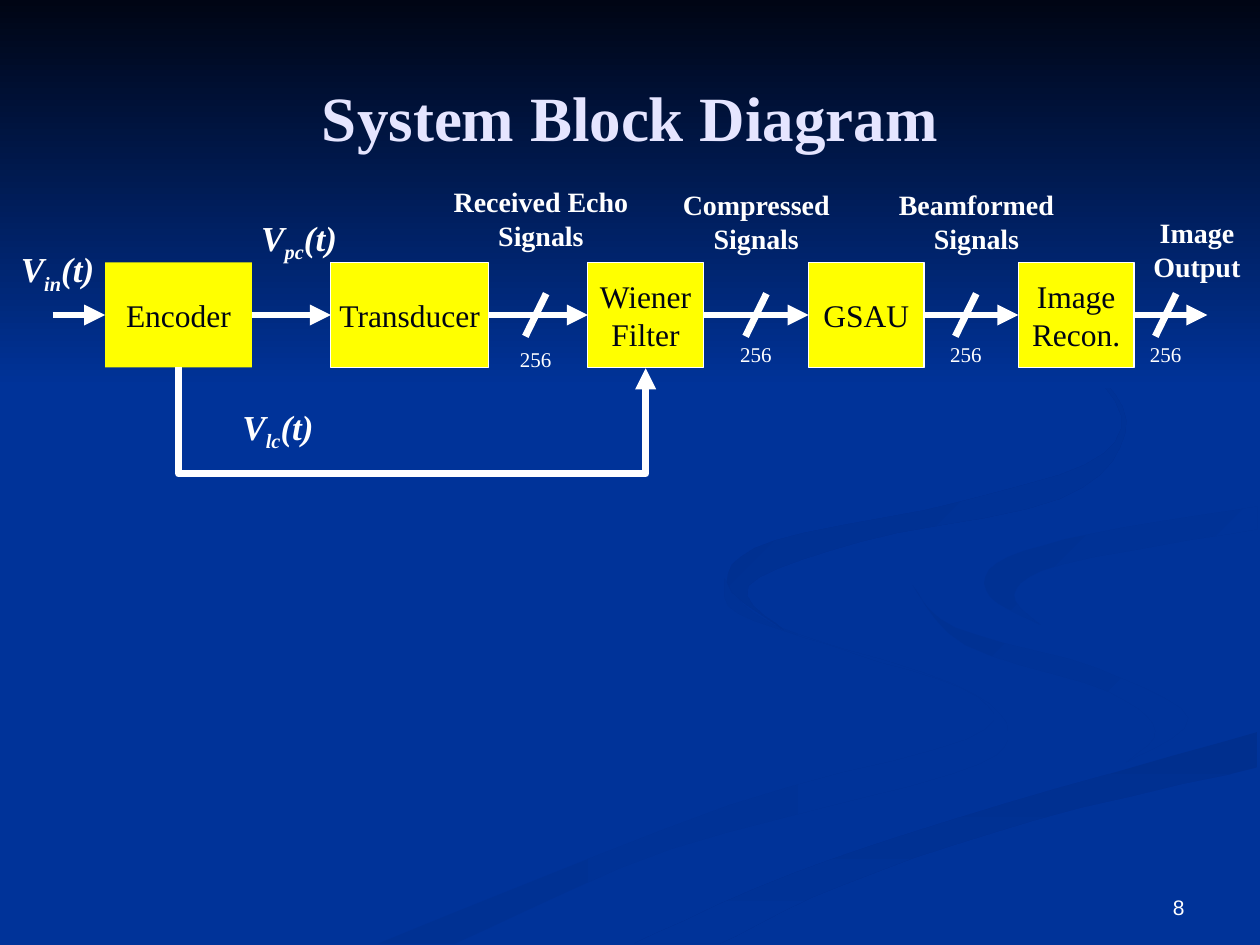
from lxml import etree
from pptx import Presentation
from pptx import util as u
from pptx.dml.color import RGBColor
from pptx.enum import shapes, text
from pptx.oxml.ns import qn

Cm = u.Cm
BLUE = RGBColor(0x00, 0x33, 0x99)
NIGHT = RGBColor(0x00, 0x05, 0x14)
DEEP = RGBColor(0x00, 0x2F, 0x8E)
SOFT = RGBColor(0x00, 0x31, 0x93)
YELLOW = RGBColor(0xFF, 0xFF, 0x00)
WHITE = RGBColor(0xFF, 0xFF, 0xFF)
LAVENDER = RGBColor(0xE5, 0xE5, 0xFF)
SERIF = "Times New Roman"

BLOCK_TOP, BLOCK_HEIGHT = 5.29, 2.12
SIGNAL_Y = BLOCK_TOP + BLOCK_HEIGHT / 2
BLOCKS = [
    (["Encoder"], 2.12, 2.96),
    (["Transducer"], 6.67, 3.18),
    (["Wiener", "Filter"], 11.85, 2.33),
    (["GSAU"], 16.3, 2.33),
    (["Image", "Recon."], 20.53, 2.33),
]
INPUT_X, OUTPUT_X = 1.06, 24.34
FEEDBACK_DROP = 2.16

VOLTAGES = [
    ("in", -0.85, 4.87, 4.02),
    ("pc", 4.02, 4.23, 4.02),
    ("lc", 4.44, 8.04, 2.33),
]
CAPTIONS = [
    ("Received Echo Signals", 8.68, 3.6, 4.45),
    ("Compressed Signals", 13.34, 3.66, 3.81),
    ("Beamformed Signals", 17.78, 3.66, 3.81),
    ("Image Output", 22.86, 4.23, 2.54),
]
BUS_WIDTH = "256"
BUSES = [(10.8, 6.86), (15.24, 6.77), (19.47, 6.77), (23.5, 6.77)]

RIBBON_UNIT = Cm(0.0254)
CURVE_STEPS = 5
RIBBONS = [
    (SOFT, BLUE, 0,
     [(575, 459), (586, 487), (679, 519), (776, 553), (767, 587), (579, 639), (300, 749)],
     [(361, 749), (532, 674), (756, 614), (800, 581), (757, 543), (614, 496), (575, 459)]),
    (SOFT, BLUE, 45,
     [(724, 464), (758, 498), (870, 530), (943, 570), (894, 605)],
     [(894, 605), (917, 580), (880, 549), (766, 512), (724, 464)]),
    (DEEP, BLUE, 90,
     [(503, 749), (630, 693), (797, 638), (998, 581)],
     [(998, 609), (821, 651), (670, 702), (571, 749)]),
    (SOFT, BLUE, 45,
     [(998, 402), (865, 424), (791, 447), (786, 474), (826, 496)],
     [(826, 496), (805, 472), (843, 448), (998, 420)]),
    (DEEP, BLUE, 45,
     [(762, 233), (864, 291), (893, 344), (841, 396), (683, 430), (594, 465), (622, 500)],
     [(622, 500), (577, 462), (615, 429), (763, 398), (876, 360), (876, 306), (762, 233)]),
]


def smooth(rail):
    padded = [rail[0], *rail, rail[-1]]
    points = [rail[0]]
    for a, b, c, d in zip(padded, padded[1:], padded[2:], padded[3:]):
        for step in range(1, CURVE_STEPS + 1):
            t = step / CURVE_STEPS
            points.append(tuple(
                q + ((r - p) * t + (2 * p - 5 * q + 4 * r - s) * t ** 2
                     + (3 * q - p - 3 * r + s) * t ** 3) / 2
                for p, q, r, s in zip(a, b, c, d)))
    return points


def fade(shape, first, last, angle):
    shape.shadow.inherit = False
    shape.line.fill.background()
    shape.fill.gradient()
    shape.fill.gradient_angle = -angle % 360
    for stop, color in zip(shape.fill.gradient_stops, (first, last)):
        stop.color.rgb = color


def add_ribbon(page, first, last, angle, outward, back):
    points = smooth(outward) + smooth(back)
    builder = page.shapes.build_freeform(*points[0], scale=RIBBON_UNIT)
    builder.add_line_segments(points[1:], close=True)
    fade(builder.convert_to_shape(), first, last, angle)


def add_span(para, words, size, color, font=SERIF, bold=False, italic=False):
    span = para.add_run()
    span.text = words
    span.font.size = u.Pt(size)
    span.font.name = font
    span.font.color.rgb = color
    span.font.bold = bold
    span.font.italic = italic
    return span


def add_label(page, left, top, width, height, align=text.PP_ALIGN.CENTER,
              anchor=text.MSO_ANCHOR.TOP):
    box = page.shapes.add_textbox(Cm(left), Cm(top), Cm(width), Cm(height))
    box.text_frame.word_wrap = True
    box.text_frame.vertical_anchor = anchor
    para = box.text_frame.paragraphs[0]
    para.alignment = align
    return para


def add_block(page, lines, left, width, outlined):
    block = page.shapes.add_shape(shapes.MSO_SHAPE.RECTANGLE, Cm(left),
                                  Cm(BLOCK_TOP), Cm(width), Cm(BLOCK_HEIGHT))
    block.shadow.inherit = False
    block.fill.solid()
    block.fill.fore_color.rgb = YELLOW
    if outlined:
        block.line.color.rgb = WHITE
        block.line.width = u.Pt(0.75)
    else:
        block.line.fill.background()
    frame = block.text_frame
    frame.word_wrap = False
    frame.vertical_anchor = text.MSO_ANCHOR.MIDDLE
    for number, words in enumerate(lines):
        para = frame.add_paragraph() if number else frame.paragraphs[0]
        para.alignment = text.PP_ALIGN.CENTER
        add_span(para, words, 18, NIGHT)


def add_wire(page, x1, y1, x2, y2, arrow=True, kind=shapes.MSO_CONNECTOR.STRAIGHT):
    wire = page.shapes.add_connector(kind, Cm(x1), Cm(y1), Cm(x2), Cm(y2))
    wire.line.color.rgb = WHITE
    wire.line.width = u.Pt(4)
    properties = wire.element.spPr
    if arrow:
        etree.SubElement(properties.find(qn("a:ln")), qn("a:tailEnd"), type="triangle")
    etree.SubElement(properties, qn("a:effectLst"))
    return wire


def add_feedback(page, start_x, end_x):
    middle_x, middle_y = (start_x + end_x) / 2, BLOCK_TOP + BLOCK_HEIGHT
    length, step = end_x - start_x, 0.03
    wire = add_wire(page, middle_x + step / 2, middle_y - length / 2,
                    middle_x - step / 2, middle_y + length / 2,
                    kind=shapes.MSO_CONNECTOR.ELBOW)
    properties = wire.element.spPr
    properties.find(qn("a:xfrm")).set("rot", str(270 * 60000))
    bend = round(FEEDBACK_DROP / step * 100000)
    etree.SubElement(properties.find(qn("a:prstGeom")).find(qn("a:avLst")),
                     qn("a:gd"), name="adj1", fmla=f"val {bend}")


def main():
    deck = Presentation()
    deck.slide_width, deck.slide_height = Cm(25.4), Cm(19.05)
    page = deck.slides.add_slide(deck.slide_layouts[6])
    page.background.fill.solid()
    page.background.fill.fore_color.rgb = BLUE
    for ribbon in RIBBONS:
        add_ribbon(page, *ribbon)
    sky = page.shapes.add_shape(shapes.MSO_SHAPE.RECTANGLE, 0, 0,
                                deck.slide_width, Cm(7.82))
    fade(sky, NIGHT, BLUE, 90)

    title = add_label(page, 1.27, 0.76, 22.86, 3.18, anchor=text.MSO_ANCHOR.MIDDLE)
    add_span(title, "System Block Diagram", 36, LAVENDER, bold=True)
    number = add_label(page, 18.2, 17.35, 5.93, 1.32, text.PP_ALIGN.RIGHT,
                       text.MSO_ANCHOR.BOTTOM)
    add_span(number, "8", 12, WHITE, font="Arial")

    for index, (lines, left, width) in enumerate(BLOCKS):
        add_block(page, lines, left, width, outlined=index > 0)
    for subscript, left, top, width in VOLTAGES:
        para = add_label(page, left, top, width, 1.12)
        for words, baseline in (("V", 0), (subscript, -25000), ("(t)", 0)):
            span = add_span(para, words, 20, WHITE, bold=True, italic=True)
            if baseline:
                span._r.get_or_add_rPr().set("baseline", str(baseline))
    for words, left, top, width in CAPTIONS:
        add_span(add_label(page, left, top, width, 1.63), words, 16, WHITE, bold=True)
    for center, top in BUSES:
        add_wire(page, center - 0.21, SIGNAL_Y + 0.43, center + 0.21,
                 SIGNAL_Y - 0.43, arrow=False)
        add_span(add_label(page, center - 0.85, top, 1.7, 0.76), BUS_WIDTH, 12, WHITE)

    starts = [INPUT_X] + [left + width for _, left, width in BLOCKS]
    ends = [left for _, left, _ in BLOCKS] + [OUTPUT_X]
    for start, end in zip(starts, ends):
        add_wire(page, start, SIGNAL_Y, end, SIGNAL_Y)
    encoder, wiener = (left + width / 2 for _, left, width in (BLOCKS[0], BLOCKS[2]))
    add_feedback(page, encoder, wiener)
    deck.save("out.pptx")


if __name__ == "__main__":
    main()
